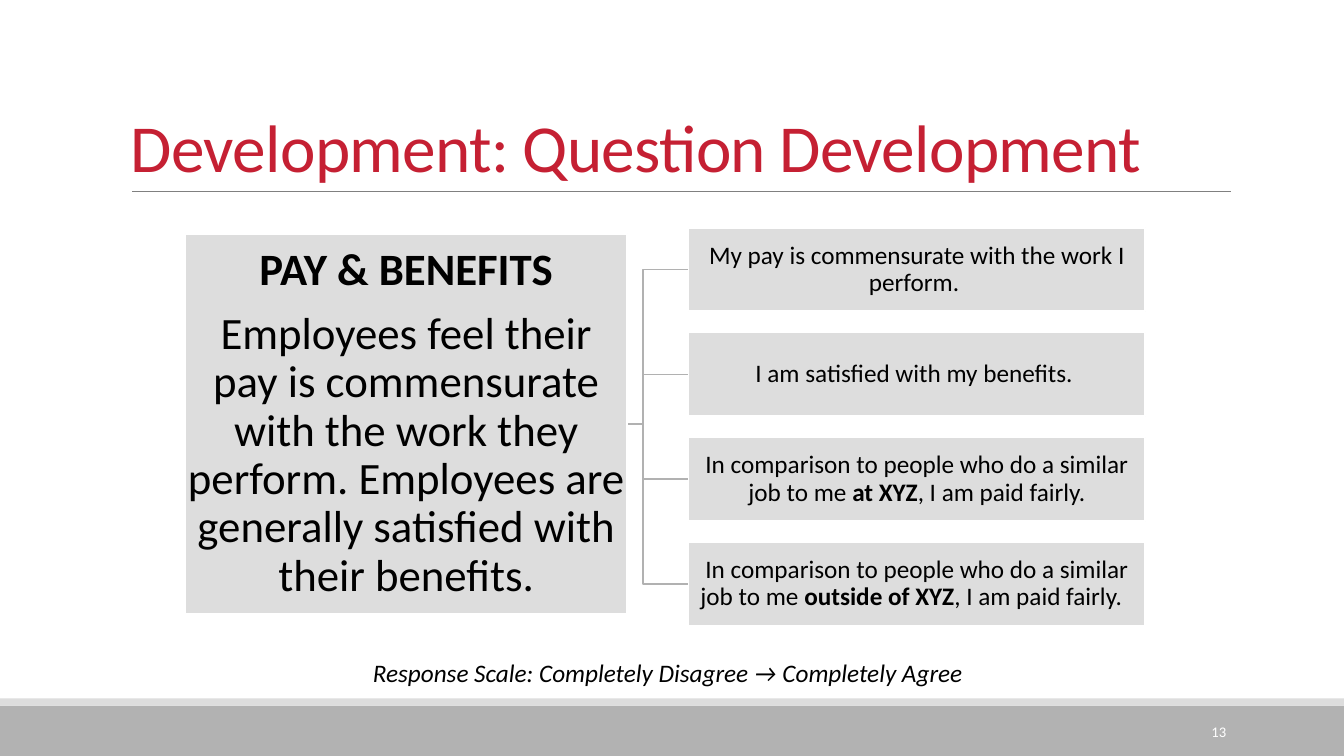
from lxml import etree
from pptx import Presentation
from pptx.dml.color import RGBColor
from pptx.enum.shapes import MSO_CONNECTOR, MSO_SHAPE
from pptx.enum.text import MSO_ANCHOR, PP_ALIGN
from pptx.oxml.ns import qn
from pptx.util import Inches, Pt

RECTANGLE = MSO_SHAPE.RECTANGLE
STRAIGHT = MSO_CONNECTOR.STRAIGHT
MIDDLE, BOTTOM = MSO_ANCHOR.MIDDLE, MSO_ANCHOR.BOTTOM
LEFT, CENTER, RIGHT = PP_ALIGN.LEFT, PP_ALIGN.CENTER, PP_ALIGN.RIGHT

COLORS = {
    "title": "C52033",
    "rule": "808080",
    "band": "B2B2B2",
    "panel": "DDDDDD",
    "branch": "B1B1B1",
    "white": "FFFFFF",
    "text": "000000",
}
FONT = "Calibri"

THEME = [
    [("PAY & BENEFITS", True)],
    [("Employees feel their pay is commensurate with the work they perform. "
      "Employees are generally satisfied with their benefits.", False)],
]
COMPARISON = "In comparison to people who do a similar job to me "
QUESTIONS = [
    [("My pay is commensurate with the work I perform. ", False)],
    [("I am satisfied with my benefits. ", False)],
    [(COMPARISON, False), ("at XYZ", True), (", I am paid fairly.", False)],
    [(COMPARISON, False), ("outside of XYZ", True), (", I am paid fairly.  ", False)],
]


def rgb(name):
    """Return the named colour."""
    return RGBColor.from_string(COLORS[name])


def style_paragraph(paragraph, size, color="text", align=LEFT):
    """Set the font and alignment of a whole paragraph."""
    paragraph.alignment = align
    paragraph.font.name = FONT
    paragraph.font.size = Pt(size)
    paragraph.font.color.rgb = rgb(color)


def add_panel(slide, box, fill, outline=None):
    """Draw a flat rectangle in the given box."""
    panel = slide.shapes.add_shape(RECTANGLE, *map(Inches, box))
    panel.shadow.inherit = False
    panel.fill.solid()
    panel.fill.fore_color.rgb = rgb(fill)
    if outline:
        panel.line.color.rgb = rgb(outline)
        panel.line.width = Pt(1.25)
    else:
        panel.line.fill.background()
    return panel


def add_card(slide, box, paragraphs, size, inset):
    """Draw a panel with centred paragraphs of (wording, bold) runs."""
    frame = add_panel(slide, box, "panel", "white").text_frame
    frame.word_wrap = True
    frame.vertical_anchor = MIDDLE
    frame.margin_left = frame.margin_right = Inches(inset)
    frame.margin_top = frame.margin_bottom = Inches(inset)
    for index, runs in enumerate(paragraphs):
        paragraph = frame.add_paragraph() if index else frame.paragraphs[0]
        style_paragraph(paragraph, size, align=CENTER)
        paragraph.line_spacing = 0.9
        paragraph.space_after = Pt(round(size * 0.35))
        for wording, bold in runs:
            run = paragraph.add_run()
            run.text = wording
            run.font.bold = bold


def add_label(slide, box, wording, size, color="text", align=LEFT, anchor=MIDDLE, wrap=True):
    """Place one line of text and return its paragraph."""
    frame = slide.shapes.add_textbox(*map(Inches, box)).text_frame
    frame.word_wrap = wrap
    frame.vertical_anchor = anchor
    paragraph = frame.paragraphs[0]
    paragraph.text = wording
    style_paragraph(paragraph, size, color, align)
    return paragraph


def add_footer(slide, box, number):
    """Draw the bottom band, its light edge and the slide number."""
    left, top, width, height = box
    edge = 0.07
    add_panel(slide, (left, top + edge, width, height - edge), "band")
    add_panel(slide, (left, top, width, edge), "panel")
    add_label(slide, (left + width - 2.5, top + 0.13, 1.43, 0.4), number, 10.5, "white", RIGHT)


def add_title(slide, box, wording):
    """Write the title on the bottom of its box, above a thin rule."""
    left, top, width, height = box
    base = Inches(top + height)
    rule = slide.shapes.add_connector(
        STRAIGHT, Inches(left + 0.11), base, Inches(left + width + 0.01), base)
    rule.line.color.rgb = rgb("rule")
    rule.line.width = Pt(0.5)
    etree.SubElement(rule._element.spPr, qn("a:effectLst"))
    title = add_label(slide, box, wording, 48, "title", anchor=BOTTOM)
    title.line_spacing = 0.85
    title.runs[0]._r.get_or_add_rPr().set("spc", "-50")


def add_branch(slide, start, end):
    """Draw an elbow line that turns halfway between two points."""
    (start_x, start_y), (end_x, end_y) = start, end
    turn = (start_x + end_x) / 2
    corners = [(turn, start_y), (turn, end_y), end]
    outline = slide.shapes.build_freeform(Inches(start_x), Inches(start_y))
    outline.add_line_segments([(Inches(x), Inches(y)) for x, y in corners], close=False)
    branch = outline.convert_to_shape()
    branch.shadow.inherit = False
    branch.fill.background()
    branch.line.color.rgb = rgb("branch")
    branch.line.width = Pt(1.25)


def add_question_tree(slide, box):
    """Draw the theme card on the left, branching to the question cards."""
    left, top, width, height = box
    card_width, card_height = 4.53, 0.83
    card_left = left + width - card_width
    pitch = (height - card_height) / (len(QUESTIONS) - 1)
    card_tops = [top + index * pitch for index in range(len(QUESTIONS))]
    root = (left + 4.08, top + height / 2 - 0.03)
    for card_top in reversed(card_tops):
        add_branch(slide, root, (card_left, card_top + card_height / 2))
    add_card(slide, (left, top + 0.06, 4.38, 3.77), THEME, 32, 0.02)
    for card_top, question in zip(card_tops, QUESTIONS):
        add_card(slide, (card_left, card_top, card_width, card_height), [question], 18, 0.01)


def main():
    """Build the slide and save it."""
    deck = Presentation()
    deck.slide_width, deck.slide_height = Inches(13.33), Inches(7.5)
    slide = deck.slides.add_slide(deck.slide_layouts[6])
    add_footer(slide, (0, 6.93, 13.33, 0.57), "13")
    add_title(slide, (1.2, 0.31, 11, 1.59), "Development: Question Development")
    add_question_tree(slide, (1.84, 2.26, 9.52, 3.95))
    scale = add_label(slide, (3.6, 6.47, 6.13, 0.4),
                      "Response Scale: Completely Disagree → Completely Agree", 18, wrap=False)
    scale.font.italic = True
    deck.save("out.pptx")


if __name__ == "__main__":
    main()
